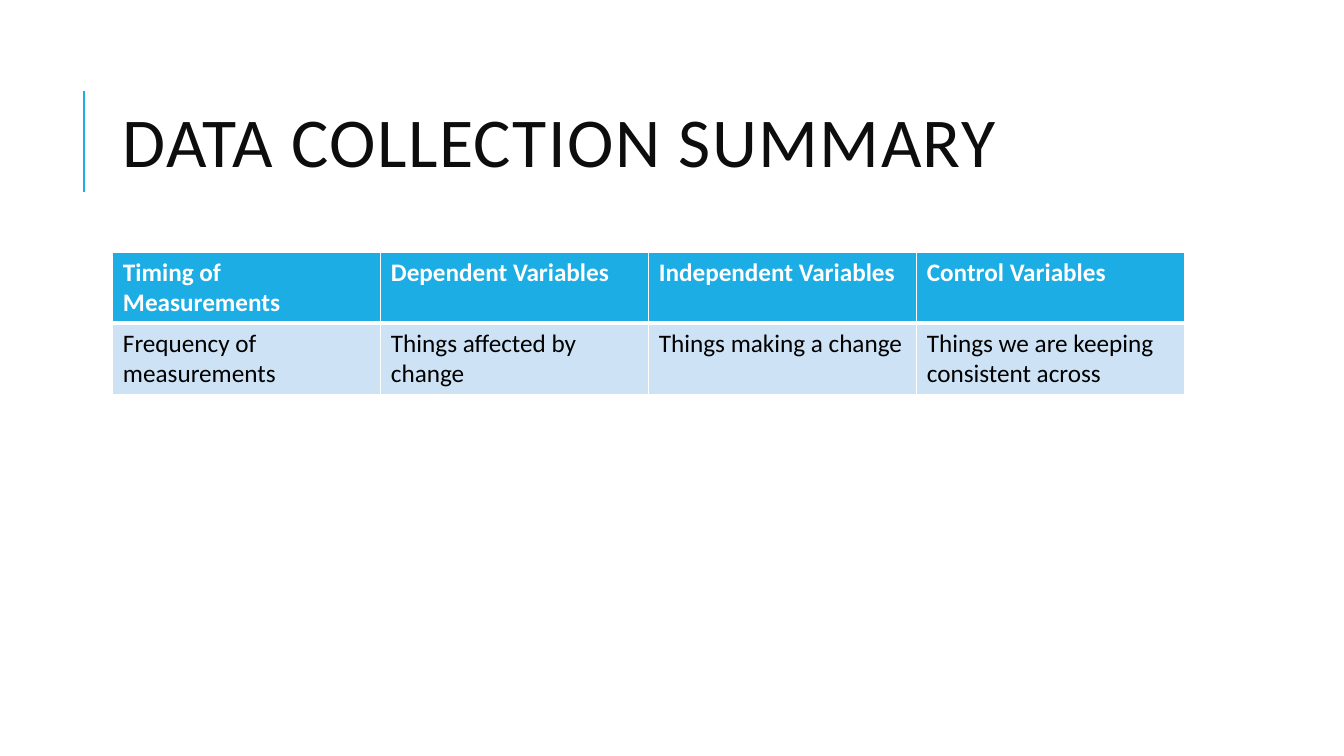
from lxml import etree
from pptx import Presentation
from pptx.dml.color import RGBColor
from pptx.enum import shapes, text
from pptx.oxml import ns
from pptx.util import Pt

COLORS = {"accent": "1CADE4", "band": "CDE3F5", "title": "0D0D0D",
          "white": "FFFFFF", "black": "000000"}
ROWS = [
    ["Timing of Measurements", "Dependent Variables",
     "Independent Variables", "Control Variables"],
    ["Frequency of measurements", "Things affected by change",
     "Things making a change", "Things we are keeping consistent across"],
]
STYLES = [("accent", "white", True), ("band", "black", False)]
BORDERS = [{"lnL": 1, "lnR": 1, "lnT": 1, "lnB": 3},
           {"lnL": 1, "lnR": 1, "lnT": 3, "lnB": 1}]
LEFT, WIDTH, ROW_HEIGHT = 80.64, 765.6, 50.8


def add_span(para, words, size, color, bold=False):
    span = para.add_run()
    span.text = words
    span.font.name = "Calibri"
    span.font.size = Pt(size)
    span.font.bold = bold
    span.font.color.rgb = RGBColor.from_string(COLORS[color])
    return span


def set_borders(cell, widths):
    """Draw white cell edges, with widths in points keyed by edge tag."""
    props = cell._tc.get_or_add_tcPr()
    for index, (tag, width) in enumerate(widths.items()):
        edge = etree.Element(ns.qn(f"a:{tag}"), w=str(Pt(width)))
        fill = etree.SubElement(edge, ns.qn("a:solidFill"))
        etree.SubElement(fill, ns.qn("a:srgbClr"), val=COLORS["white"])
        props.insert(index, edge)


deck = Presentation()
deck.slide_width, deck.slide_height = Pt(960), Pt(540)
page = deck.slides.add_slide(deck.slide_layouts[6])

# Accent line beside the title
rule = page.shapes.add_connector(shapes.MSO_CONNECTOR.STRAIGHT,
                                 Pt(60), Pt(136.8), Pt(60), Pt(64.8))
rule.line.color.rgb = RGBColor.from_string(COLORS["accent"])
rule.line.width = Pt(1.5)
etree.SubElement(rule._element.spPr, ns.qn("a:effectLst"))

# Title
box = page.shapes.add_textbox(Pt(LEFT), Pt(46.08), Pt(WIDTH), Pt(118))
box.text_frame.word_wrap = True
box.text_frame.vertical_anchor = text.MSO_ANCHOR.MIDDLE
para = box.text_frame.paragraphs[0]
para.line_spacing = 0.8
title = add_span(para, "DATA COLLECTION SUMMARY", 50, "title")
title.font._element.set("spc", "100")

# Variables table
table = page.shapes.add_table(len(ROWS), len(ROWS[0]), Pt(LEFT), Pt(180),
                              Pt(WIDTH), Pt(ROW_HEIGHT * len(ROWS))).table
for column in table.columns:
    column.width = Pt(WIDTH / len(ROWS[0]))
for r, (labels, (fill, color, bold)) in enumerate(zip(ROWS, STYLES)):
    table.rows[r].height = Pt(ROW_HEIGHT)
    for c, label in enumerate(labels):
        cell = table.cell(r, c)
        cell.fill.solid()
        cell.fill.fore_color.rgb = RGBColor.from_string(COLORS[fill])
        set_borders(cell, BORDERS[r])
        add_span(cell.text_frame.paragraphs[0], label, 18, color, bold)

deck.save("out.pptx")
